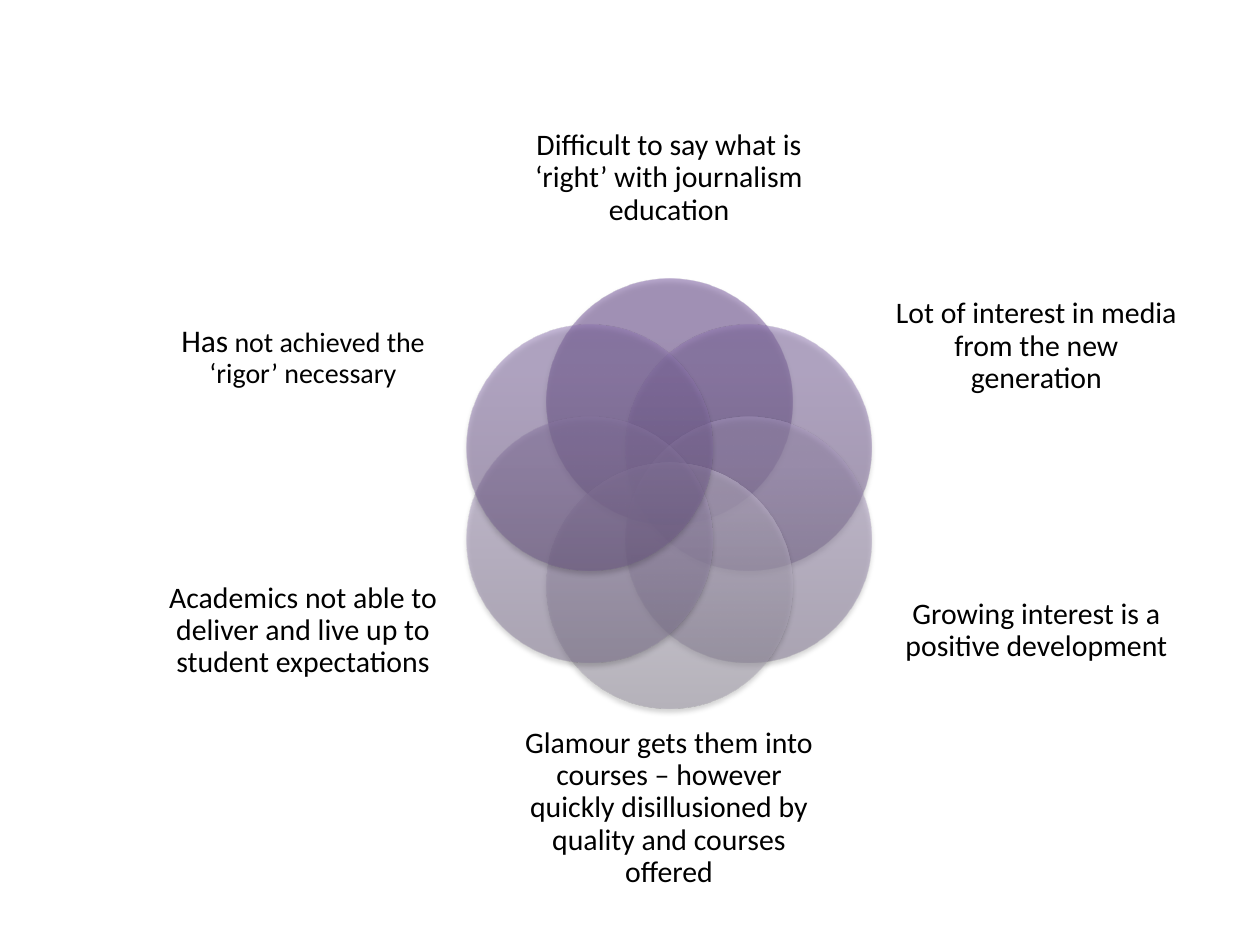
import math

from pptx import Presentation
from pptx.dml.color import RGBColor
from pptx.enum import shapes, text
from pptx.oxml import parse_xml
from pptx.oxml.ns import nsdecls, qn
from pptx.util import Inches, Pt

FONT = "Calibri"
COLORS = {
    "text": "000000",
    "shadow": "000000",
    "deep": ("563D74", "705097", "704F99"),
    "medium": ("6C5885", "8C73AD", "8C72AF"),
    "light": ("827693", "A999BF", "AA99C1"),
    "pale": ("9993A3", "C7BED3", "C7BFD5"),
}
STOPS = (0, 80, 100)
OPACITY = 50

# Clockwise from the top: circle tone, label box (left, top, width, height), runs (text, size)
PETALS = [
    ("deep", (4.09, 0.75, 2.44, 1.33),
     [("Difficult to say what is ‘right’ with journalism education", 17)]),
    ("medium", (7.07, 2.02, 2.31, 1.46),
     [("Lot of interest in media from the new generation", 17)]),
    ("light", (7.07, 4.19, 2.31, 1.63),
     [("Growing interest is a positive development", 17)]),
    ("pale", (4.09, 5.75, 2.44, 1.33),
     [("Glamour gets them into courses – however quickly disillusioned by "
       "quality and courses offered", 17)]),
    ("light", (1.25, 4.19, 2.31, 1.63),
     [("Academics not able to deliver and live up to student expectations", 17)]),
    ("medium", (1.25, 2.02, 2.31, 1.63),
     [("Has", 18), (" not achieved the ‘rigor’ necessary", 16)]),
]
CENTER_X, CENTER_Y = 5.31, 3.92
RING_RADIUS = 0.73
DIAMETER = 1.95


def color_xml(color, opacity):
    return f'<a:srgbClr val="{color}"><a:alpha val="{opacity * 1000}"/></a:srgbClr>'


def fill_with_gradient(shape, colors):
    """Translucent vertical gradient that runs from bottom to top."""
    shape.fill.gradient()
    shape.fill.gradient_angle = 90
    stops = "".join(
        f'<a:gs pos="{position * 1000}">{color_xml(color, OPACITY)}</a:gs>'
        for position, color in zip(STOPS, colors))
    gradient = shape._element.spPr.find(qn("a:gradFill"))
    gradient.replace(gradient.find(qn("a:gsLst")),
                     parse_xml(f'<a:gsLst {nsdecls("a")}>{stops}</a:gsLst>'))


def add_soft_shadow(shape):
    shape.shadow.inherit = False
    shape._element.spPr.find(qn("a:effectLst")).append(parse_xml(
        f'<a:outerShdw {nsdecls("a")} blurRad="{Pt(3.1)}" dist="{Pt(1.8)}" '
        f'dir="5400000" rotWithShape="0">{color_xml(COLORS["shadow"], 35)}</a:outerShdw>'))


def add_circle(group, index, tone):
    angle = math.radians(index * 360 / len(PETALS))
    left = CENTER_X + RING_RADIUS * math.sin(angle) - DIAMETER / 2
    top = CENTER_Y - RING_RADIUS * math.cos(angle) - DIAMETER / 2
    circle = group.shapes.add_shape(
        shapes.MSO_SHAPE.OVAL, Inches(left), Inches(top), Inches(DIAMETER), Inches(DIAMETER))
    fill_with_gradient(circle, COLORS[tone])
    circle.line.fill.background()
    add_soft_shadow(circle)


def add_label(group, box, runs):
    frame = group.shapes.add_textbox(*map(Inches, box)).text_frame
    frame.word_wrap = True
    frame.vertical_anchor = text.MSO_ANCHOR.MIDDLE
    frame.margin_left = frame.margin_right = frame.margin_top = frame.margin_bottom = 0
    paragraph = frame.paragraphs[0]
    paragraph.alignment = text.PP_ALIGN.CENTER
    paragraph.line_spacing = 0.9
    paragraph._p.get_or_add_pPr().append(parse_xml(
        f'<a:spcAft {nsdecls("a")}><a:spcPct val="35000"/></a:spcAft>'))
    for words, size in runs:
        run = paragraph.add_run()
        run.text = words
        run.font.name = FONT
        run.font.size = Pt(size)
        run.font.color.rgb = RGBColor.from_string(COLORS["text"])


def main():
    presentation = Presentation()
    presentation.slide_width, presentation.slide_height = Inches(10), Inches(7.5)
    slide = presentation.slides.add_slide(presentation.slide_layouts[6])
    group = slide.shapes.add_group_shape()
    for index, (tone, box, runs) in enumerate(PETALS):
        add_circle(group, index, tone)
        add_label(group, box, runs)
    presentation.save("out.pptx")


if __name__ == "__main__":
    main()
